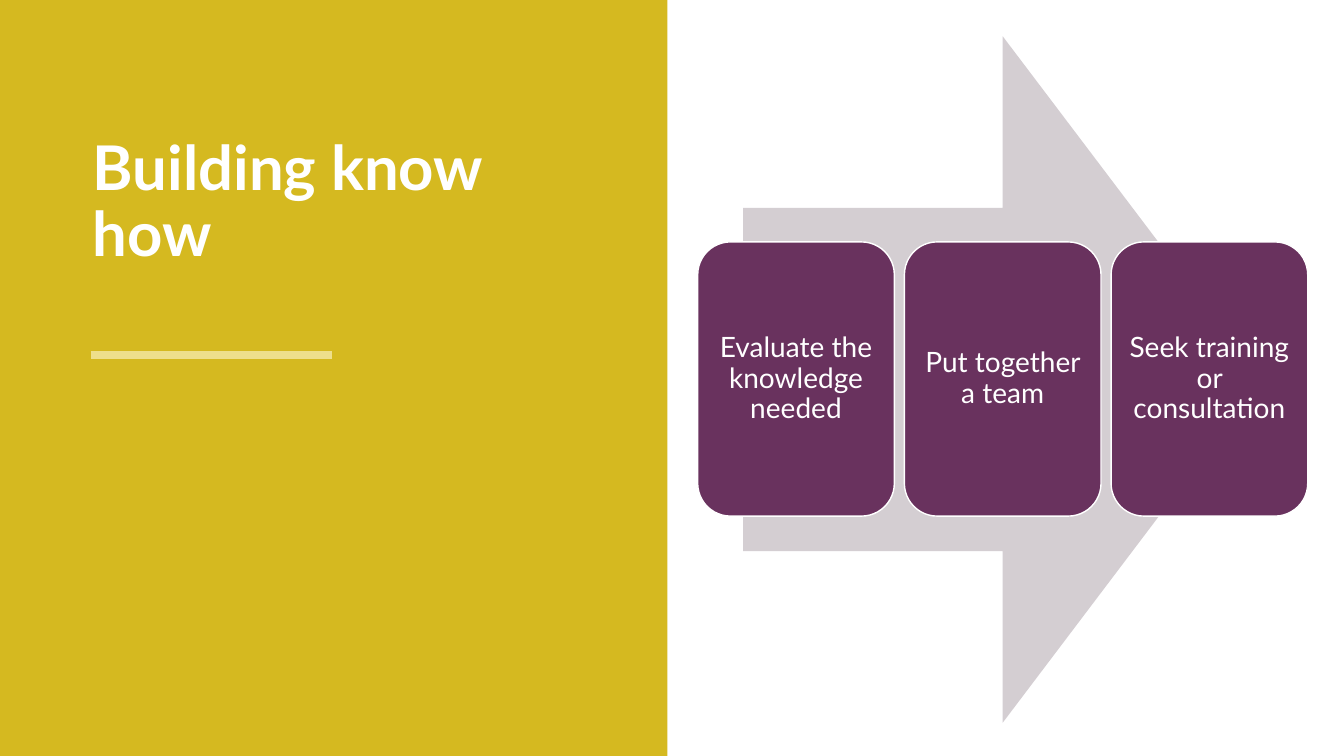
import pptx
import pptx.dml.color
import pptx.enum.shapes
import pptx.enum.text
import pptx.oxml.ns
import pptx.util
from dataclasses import dataclass
from lxml import etree

SHAPES = pptx.enum.shapes.MSO_SHAPE
ANCHORS = pptx.enum.text.MSO_ANCHOR
ALIGNS = pptx.enum.text.PP_ALIGN
SLIDE_WIDTH, SLIDE_HEIGHT = 13.33, 7.5


@dataclass(frozen=True)
class Theme:
    font: str = "Lato"
    panel: str = "D5B920"
    rule: str = "EEDF8C"
    arrow: str = "D4CED2"
    card: str = "69325E"
    light: str = "FFFFFF"
    title_size: int = 44
    card_size: int = 20
    rule_width: int = 6
    card_border: int = 1
    line_spacing: float = 0.9


THEME = Theme()

STEPS = [
    "Evaluate the knowledge needed",
    "Put together a team",
    "Seek training or consultation",
]

# Step grid, in inches: equal columns on one row
CARDS_LEFT, CARDS_TOP = 6.92, 2.4
CARD_WIDTH, CARD_HEIGHT = 1.95, 2.72
COLUMN_PITCH = 2.05


def inches(*lengths):
    return [pptx.util.Inches(length) for length in lengths]


def rgb(colour):
    return pptx.dml.color.RGBColor.from_string(colour)


def add_block(slide, preset, box, fill, border=None):
    block = slide.shapes.add_shape(preset, *inches(*box))
    block.shadow.inherit = False
    block.fill.solid()
    block.fill.fore_color.rgb = rgb(fill)
    if border:
        block.line.color.rgb = rgb(border)
        block.line.width = pptx.util.Pt(THEME.card_border)
    else:
        block.line.fill.background()
    return block


def write_text(holder, words, size, anchor, align, insets, bold=False):
    frame = holder.text_frame
    frame.word_wrap = True
    frame.vertical_anchor = anchor
    (frame.margin_left, frame.margin_top,
     frame.margin_right, frame.margin_bottom) = inches(*insets)
    paragraph = frame.paragraphs[0]
    paragraph.alignment = align
    paragraph.line_spacing = THEME.line_spacing
    run = paragraph.add_run()
    run.text = words
    run.font.name = THEME.font
    run.font.size = pptx.util.Pt(size)
    run.font.bold = bold
    run.font.color.rgb = rgb(THEME.light)


def add_rule(slide, left, right, height):
    rule = slide.shapes.add_connector(
        pptx.enum.shapes.MSO_CONNECTOR.STRAIGHT,
        *inches(left, height, right, height))
    rule.line.color.rgb = rgb(THEME.rule)
    rule.line.width = pptx.util.Pt(THEME.rule_width)
    etree.SubElement(rule.element.spPr, pptx.oxml.ns.qn("a:effectLst"))


def add_title(slide, words, box):
    title = slide.shapes.add_textbox(*inches(*box))
    write_text(title, words, THEME.title_size, ANCHORS.BOTTOM, ALIGNS.LEFT,
               (0, 0.05, 0.1, 0.05), bold=True)


def add_step(slide, column, words):
    left = CARDS_LEFT + column * COLUMN_PITCH
    card = add_block(slide, SHAPES.ROUNDED_RECTANGLE,
                     (left, CARDS_TOP, CARD_WIDTH, CARD_HEIGHT),
                     THEME.card, THEME.light)
    write_text(card, words, THEME.card_size, ANCHORS.MIDDLE, ALIGNS.CENTER,
               (0.08, 0.08, 0.08, 0.08))


def main():
    deck = pptx.Presentation()
    deck.slide_width, deck.slide_height = inches(SLIDE_WIDTH, SLIDE_HEIGHT)
    slide = deck.slides.add_slide(deck.slide_layouts[6])

    # Title panel
    add_block(slide, SHAPES.RECTANGLE, (0, 0, 6.62, SLIDE_HEIGHT), THEME.panel)
    add_rule(slide, 0.9, 3.29, 3.52)
    add_title(slide, "Building know how", (0.92, 1.2, 4.38, 1.53))

    # Process: arrow behind the step cards
    add_block(slide, SHAPES.RIGHT_ARROW, (7.37, 0.36, 5.15, 6.81), THEME.arrow)
    for column, words in enumerate(STEPS):
        add_step(slide, column, words)

    deck.save("out.pptx")


if __name__ == "__main__":
    main()
